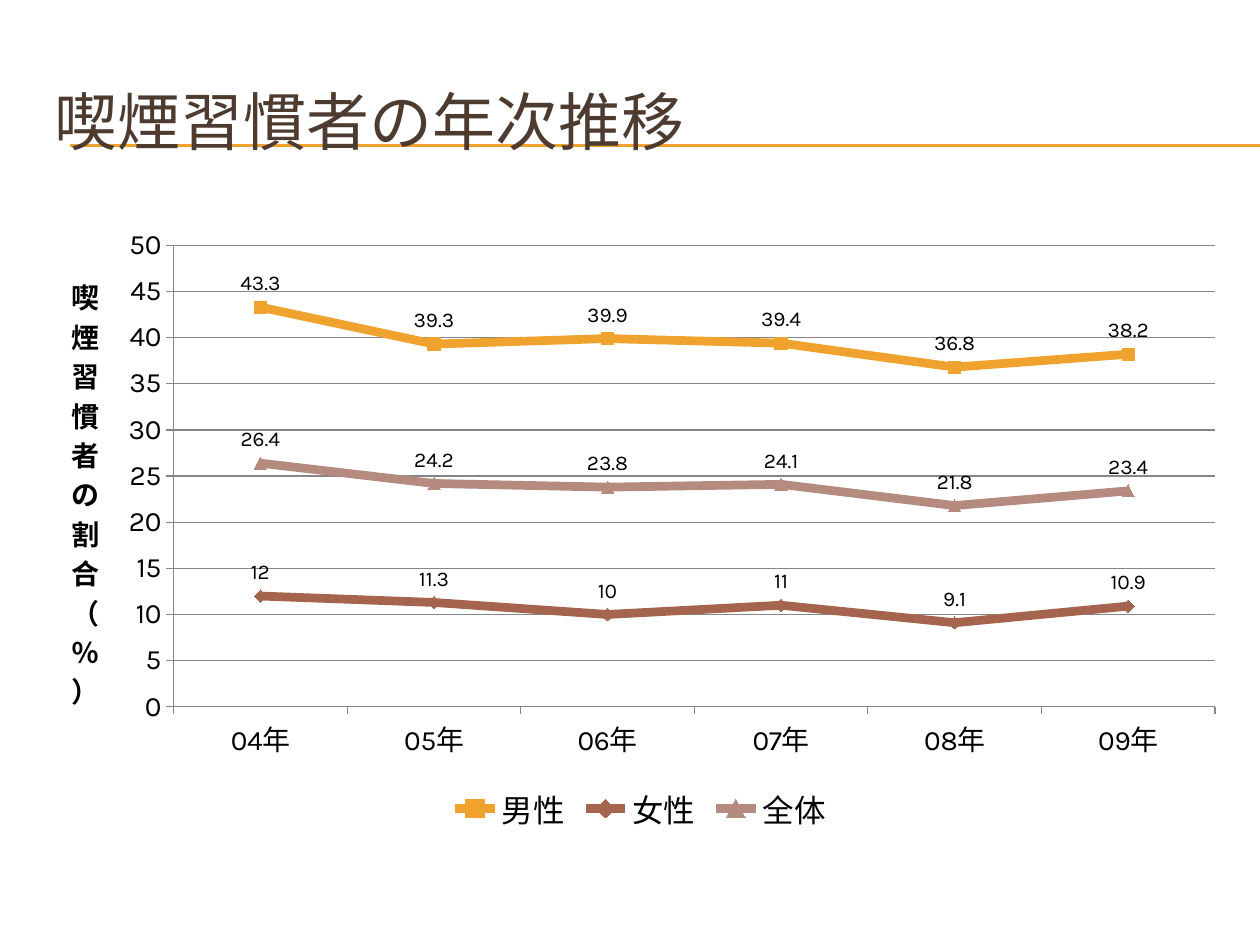
from lxml import etree
from pptx import Presentation
from pptx import util as u
from pptx.chart.data import CategoryChartData
from pptx.dml.color import RGBColor
from pptx.enum import chart as ch, shapes, text
from pptx.oxml import parse_xml
from pptx.oxml.ns import nsdecls, qn

# Content
TITLE = "喫煙習慣者の年次推移"
AXIS = "喫煙習慣者の割合（％）"
YEARS = ["04年", "05年", "06年", "07年", "08年", "09年"]
MARK = ch.XL_MARKER_STYLE
SERIES = [
    ("男性", "gold", MARK.SQUARE, [43.3, 39.3, 39.9, 39.4, 36.8, 38.2]),
    ("女性", "rust", MARK.DIAMOND, [12, 11.3, 10, 11, 9.1, 10.9]),
    ("全体", "rose", MARK.TRIANGLE, [26.4, 24.2, 23.8, 24.1, 21.8, 23.4]),
]
COLORS = {"gold": "F0A22E", "rust": "A5644E", "rose": "B58B80",
          "brown": "4E3B30", "black": "000000", "gray": "868686"}
FACE = "Karla"
WIDTH, HEIGHT = 720, 540
LEFT, SPAN = 24, 684
PLOT = {"x": 0.11, "y": 0.05, "w": 0.87, "h": 0.74}


def color(name):
    return RGBColor.from_string(COLORS[name])


def style(font, size, name="black", bold=False):
    font.name, font.size, font.bold = FACE, u.Pt(size), bold
    font.color.rgb = color(name)


def stroke(line, name, width):
    line.color.rgb = color(name)
    line.width = u.Pt(width)


deck = Presentation()
deck.slide_width, deck.slide_height = u.Pt(WIDTH), u.Pt(HEIGHT)
slide = deck.slides.add_slide(deck.slide_layouts[6])

# Double rule under the title
for y in (82.8, 83.5):
    rule = slide.shapes.add_connector(
        shapes.MSO_CONNECTOR.STRAIGHT, u.Pt(40.3), u.Pt(y), u.Pt(WIDTH), u.Pt(y))
    stroke(rule.line, "gold", 0.75)
    etree.SubElement(rule._element.spPr, qn("a:effectLst"))

# Title
box = slide.shapes.add_textbox(u.Pt(LEFT), u.Pt(36), u.Pt(SPAN), u.Pt(66))
frame = box.text_frame
frame.word_wrap = True
frame.vertical_anchor = text.MSO_ANCHOR.MIDDLE
frame.text = TITLE
style(frame.paragraphs[0].runs[0].font, 36, "brown")

# Line chart
data = CategoryChartData()
data.categories = YEARS
for name, _, _, vals in SERIES:
    data.add_series(name, vals)
chart = slide.shapes.add_chart(
    ch.XL_CHART_TYPE.LINE_MARKERS, u.Pt(LEFT), u.Pt(122.4),
    u.Pt(SPAN), u.Pt(356.4), data).chart
chart.has_title = False
style(chart.font, 18)
chart.has_legend = True
chart.legend.position = ch.XL_LEGEND_POSITION.BOTTOM
chart.legend.include_in_layout = False
style(chart.legend.font, 18)

# Series
plot = chart.plots[0]
plot.vary_by_categories = False
for line, (_, tint, mark, _) in zip(plot.series, SERIES):
    line.smooth = False
    stroke(line.format.line, tint, 5)
    line.marker.style, line.marker.size = mark, 7
    line.marker.format.fill.solid()
    line.marker.format.fill.fore_color.rgb = color(tint)
    stroke(line.marker.format.line, tint, 0.75)
    labels = line.data_labels
    labels.show_value = True
    labels.position = ch.XL_LABEL_POSITION.ABOVE
    style(labels.font, 12)

# Axes
years, rate = chart.category_axis, chart.value_axis
for axis in (years, rate):
    axis.major_tick_mark = ch.XL_TICK_MARK.OUTSIDE
    axis.minor_tick_mark = ch.XL_TICK_MARK.NONE
    style(axis.tick_labels.font, 16)
    stroke(axis.format.line, "gray", 0.75)
rate.minimum_scale, rate.maximum_scale, rate.major_unit = 0, 50, 5
rate.has_major_gridlines = True
stroke(rate.major_gridlines.format.line, "gray", 0.75)

# Axis title with stacked upright characters
frame = rate.axis_title.text_frame
frame.text = AXIS
style(frame.paragraphs[0].runs[0].font, 16, bold=True)
body = frame._txBody.find(qn("a:bodyPr"))
body.set("rot", "0")
body.set("vert", "wordArtVertRtl")

# Plot area as fractions of the chart
area = chart._chartSpace.find(".//" + qn("c:plotArea"))
for old in area.findall(qn("c:layout")):
    area.remove(old)
parts = "".join(f'<c:{k}Mode val="edge"/>' for k in "xy")
parts += "".join(f'<c:{k} val="{v}"/>' for k, v in PLOT.items())
area.insert(0, parse_xml(
    f'<c:layout {nsdecls("c")}><c:manualLayout><c:layoutTarget val="inner"/>'
    f'{parts}</c:manualLayout></c:layout>'))

deck.save("out.pptx")
